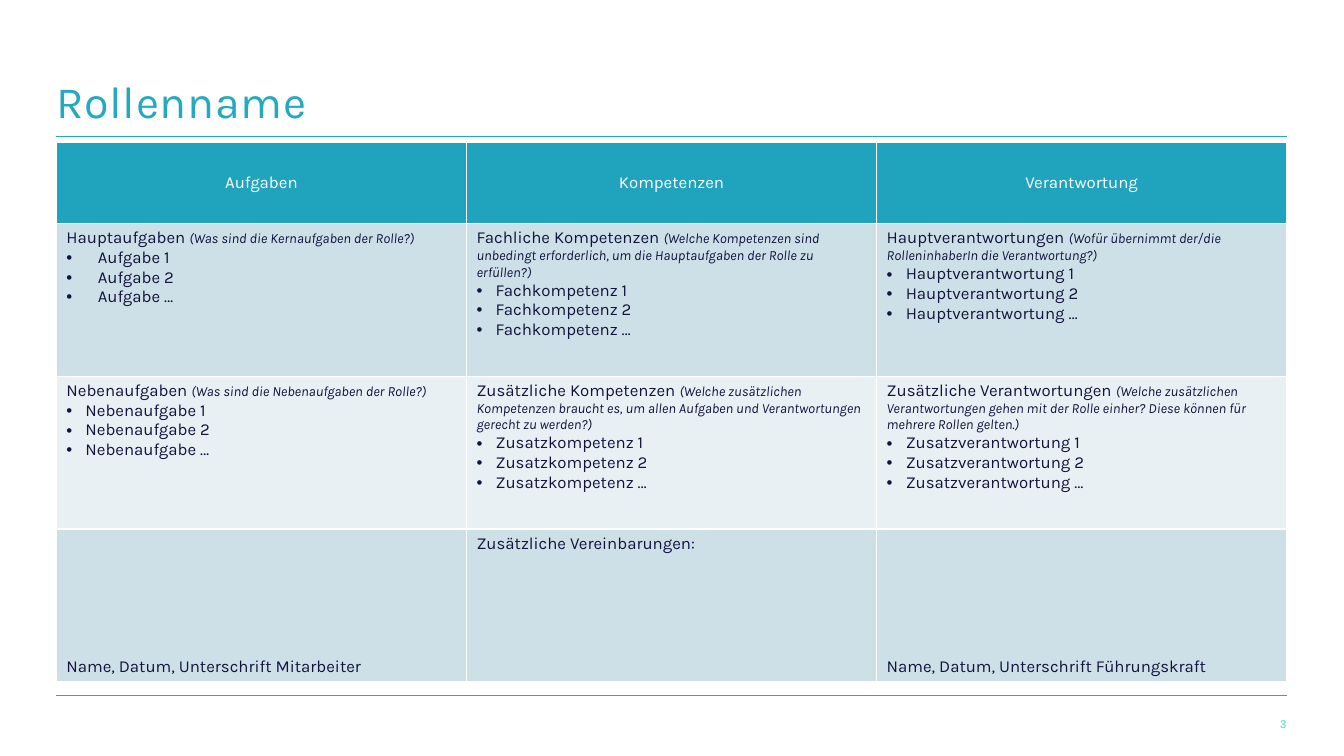
import pptx
import pptx.dml.color
import pptx.enum.shapes
import pptx.enum.text
import pptx.oxml
import pptx.oxml.ns
import pptx.util
from pptx.util import Cm

LEFT = 1.42
WIDTH = 31.01
TURQUOISE = "23A9C2"
NAVY = "13133E"
WHITE = "FFFFFF"
HEADER_FILL = "20A3BC"
DARK_BAND = "CDE0E7"
LIGHT_BAND = "E8F0F3"
ALIGN = pptx.enum.text.PP_ALIGN
ANCHOR = pptx.enum.text.MSO_ANCHOR

HEADERS = ["Aufgaben", "Kompetenzen", "Verantwortung"]
ROLE_ROWS = [
    (LIGHT_BAND if index else DARK_BAND, cells)
    for index, cells in enumerate([
        [
            ("Hauptaufgaben ", "(Was sind die Kernaufgaben der Rolle?)", "Aufgabe", 0.79),
            ("Fachliche Kompetenzen ",
             "(Welche Kompetenzen sind unbedingt erforderlich, um die Hauptaufgaben der Rolle zu erfüllen?)",
             "Fachkompetenz", 0.48),
            ("Hauptverantwortungen ",
             "(Wofür übernimmt der/die RolleninhaberIn die Verantwortung?)",
             "Hauptverantwortung", 0.48),
        ],
        [
            ("Nebenaufgaben ", "(Was sind die Nebenaufgaben der Rolle?)", "Nebenaufgabe", 0.48),
            ("Zusätzliche Kompetenzen ",
             "(Welche zusätzlichen Kompetenzen braucht es, um allen Aufgaben und Verantwortungen gerecht zu werden?)",
             "Zusatzkompetenz", 0.48),
            ("Zusätzliche Verantwortungen ",
             "(Welche zusätzlichen Verantwortungen gehen mit der Rolle einher? Diese können für mehrere Rollen gelten.)",
             "Zusatzverantwortung", 0.48),
        ],
    ])
]
SIGNATURES = [
    ("Name, Datum, Unterschrift Mitarbeiter", ANCHOR.BOTTOM),
    ("Zusätzliche Vereinbarungen:", ANCHOR.TOP),
    ("Name, Datum, Unterschrift Führungskraft", ANCHOR.BOTTOM),
]


def color(value):
    return pptx.dml.color.RGBColor.from_string(value)


def format_run(run, size, value, name="Karla", italic=False):
    run.font.size = pptx.util.Pt(size)
    run.font.name = name
    run.font.bold = False
    run.font.italic = italic
    run.font.color.rgb = color(value)


def clear_margins(text_frame):
    text_frame.margin_left = text_frame.margin_right = 0
    text_frame.margin_top = text_frame.margin_bottom = 0
    text_frame.vertical_anchor = ANCHOR.BOTTOM
    text_frame.word_wrap = True


def add_title(slide, text):
    title = slide.shapes.title
    title.left, title.top = Cm(LEFT), Cm(1.85)
    title.width, title.height = Cm(WIDTH), Cm(1.37)
    title.text_frame.text = text
    title.text_frame.auto_size = pptx.enum.text.MSO_AUTO_SIZE.NONE
    clear_margins(title.text_frame)
    paragraph = title.text_frame.paragraphs[0]
    paragraph.alignment = ALIGN.LEFT
    format_run(paragraph.runs[0], 32, TURQUOISE)
    paragraph.runs[0].font._element.set("spc", "50")


def add_rule(slide, top):
    line = slide.shapes.add_connector(
        pptx.enum.shapes.MSO_CONNECTOR.STRAIGHT,
        Cm(LEFT), Cm(top), Cm(LEFT + WIDTH), Cm(top))
    line.line.color.rgb = color(TURQUOISE)
    line.line.width = pptx.util.Pt(0.75)
    line._element.spPr.append(pptx.oxml.parse_xml(
        f'<a:effectLst {pptx.oxml.ns.nsdecls("a")}/>'))


def add_page_number(slide, text):
    box = slide.shapes.add_textbox(Cm(25.1), Cm(18.08), Cm(7.32), Cm(0.33))
    clear_margins(box.text_frame)
    box.text_frame.text = text
    paragraph = box.text_frame.paragraphs[0]
    paragraph.alignment = ALIGN.RIGHT
    format_run(paragraph.runs[0], 8, "3DD8D9", "Arial")


def style_cell(cell, fill, anchor=ANCHOR.TOP):
    properties = cell._tc.get_or_add_tcPr()
    for side in "LRTB":
        properties.append(pptx.oxml.parse_xml(
            f'<a:ln{side} {pptx.oxml.ns.nsdecls("a")} w="12700">'
            f'<a:solidFill><a:srgbClr val="{WHITE}"/></a:solidFill></a:ln{side}>'))
    cell.fill.solid()
    cell.fill.fore_color.rgb = color(fill)
    cell.vertical_anchor = anchor


def fill_plain_cell(cell, text, fill, anchor, text_color=NAVY, alignment=ALIGN.LEFT):
    style_cell(cell, fill, anchor)
    cell.text_frame.text = text
    paragraph = cell.text_frame.paragraphs[0]
    paragraph.alignment = alignment
    format_run(paragraph.runs[0], 12, text_color)


def add_bullet(text_frame, text, indent):
    paragraph = text_frame.add_paragraph()
    paragraph.text = text
    properties = paragraph._p.get_or_add_pPr()
    properties.set("marL", str(Cm(indent)))
    properties.set("indent", str(-Cm(indent)))
    for tag in ('buFont {} typeface="Arial"', 'buChar {} char="•"'):
        properties.append(pptx.oxml.parse_xml(
            f'<a:{tag.format(pptx.oxml.ns.nsdecls("a"))}/>'))
    format_run(paragraph.runs[0], 12, NAVY)


def fill_role_cell(cell, fill, heading, question, item, indent):
    style_cell(cell, fill)
    text_frame = cell.text_frame
    text_frame.text = heading
    paragraph = text_frame.paragraphs[0]
    format_run(paragraph.runs[0], 12, NAVY)
    question_run = paragraph.add_run()
    question_run.text = question
    format_run(question_run, 10, NAVY, italic=True)
    for suffix in ("1", "2", "…"):
        add_bullet(text_frame, f"{item} {suffix}", indent)


def add_role_table(slide):
    heights = [2.04, 3.85, 3.85, 3.85]
    table = slide.shapes.add_table(
        len(heights), len(HEADERS), Cm(LEFT), Cm(3.59), Cm(WIDTH), Cm(sum(heights))).table
    table.first_row = False
    table.horz_banding = False
    for row, height in zip(table.rows, heights):
        row.height = Cm(height)
    for column in table.columns:
        column.width = Cm(WIDTH / len(HEADERS))
    for index, header in enumerate(HEADERS):
        fill_plain_cell(table.cell(0, index), header, HEADER_FILL,
                        ANCHOR.MIDDLE, WHITE, ALIGN.CENTER)
    for row_index, (fill, contents) in enumerate(ROLE_ROWS, 1):
        for index, content in enumerate(contents):
            fill_role_cell(table.cell(row_index, index), fill, *content)
    for index, (text, anchor) in enumerate(SIGNATURES):
        fill_plain_cell(table.cell(3, index), text, DARK_BAND, anchor)


def main():
    presentation = pptx.Presentation()
    presentation.slide_width = Cm(33.87)
    presentation.slide_height = Cm(19.05)
    slide = presentation.slides.add_slide(presentation.slide_layouts[5])
    for top in (3.43, 17.53):
        add_rule(slide, top)
    add_page_number(slide, "3")
    add_title(slide, "Rollenname")
    add_role_table(slide)
    presentation.save("out.pptx")


if __name__ == "__main__":
    main()
